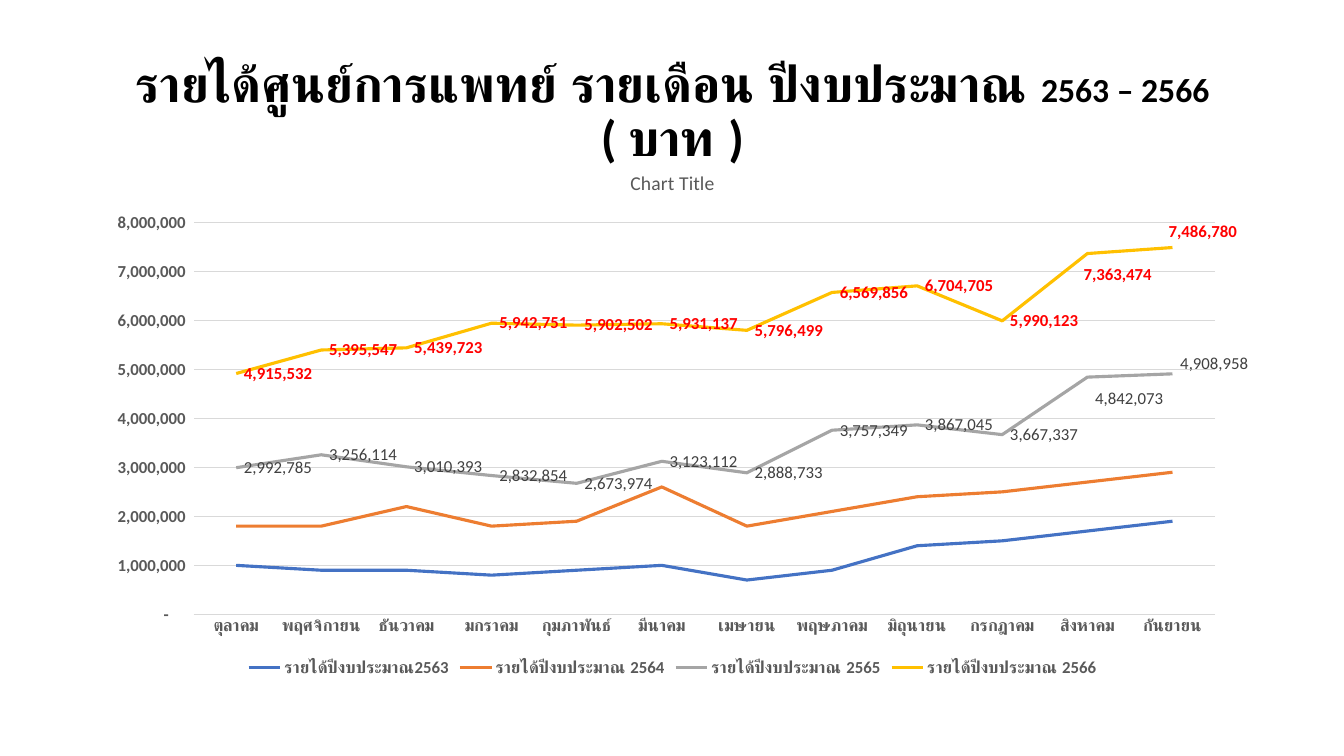
from lxml import etree
from pptx import Presentation
from pptx.chart.data import CategoryChartData
from pptx.dml.color import RGBColor
from pptx.enum.chart import XL_CHART_TYPE, XL_LABEL_POSITION, XL_LEGEND_POSITION, XL_TICK_MARK
from pptx.enum.text import MSO_ANCHOR, MSO_AUTO_SIZE, PP_ALIGN
from pptx.oxml.ns import qn
from pptx.util import Inches, Pt

BLACK = RGBColor(0x00, 0x00, 0x00)
GREY = RGBColor(0x59, 0x59, 0x59)
DARK = RGBColor(0x40, 0x40, 0x40)
RED = RGBColor(0xFF, 0x00, 0x00)
GRID = RGBColor(0xD9, 0xD9, 0xD9)
LINE_COLORS = [RGBColor(0x44, 0x72, 0xC4), RGBColor(0xED, 0x7D, 0x31),
               RGBColor(0xA5, 0xA5, 0xA5), RGBColor(0xFF, 0xC0, 0x00)]
FONT = "Calibri"
NUM_FMT = '_(* #,##0_);_(* \\(#,##0\\);_(* "-"??_);_('

MONTHS = ["ตุลาคม", "พฤศจิกายน", "ธันวาคม", "มกราคม", "กุมภาพันธ์", "มีนาคม",
          "เมษายน", "พฤษภาคม", "มิถุนายน", "กรกฎาคม", "สิงหาคม", "กันยายน"]
INCOME = {
    "รายได้ปีงบประมาณ2563": [
        1000000, 900000, 900000, 800000, 900000, 1000000,
        700000, 900000, 1400000, 1500000, 1700000, 1900000],
    "รายได้ปีงบประมาณ 2564": [
        1800000, 1800000, 2200000, 1800000, 1900000, 2600000,
        1800000, 2100000, 2400000, 2500000, 2700000, 2900000],
    "รายได้ปีงบประมาณ 2565": [
        2992785, 3256114, 3010393, 2832854, 2673974, 3123112,
        2888733, 3757349, 3867045, 3667337, 4842073, 4908958],
    "รายได้ปีงบประมาณ 2566": [
        4915532, 5395547, 5439723, 5942751, 5902502, 5931137,
        5796499, 6569856, 6704705, 5990123, 7363474, 7486780],
}
# Labelled series: colour, bold, shifted labels {point: (dx, dy)} as chart fractions
LABELS = {
    2: (DARK, False, {10: (0, 0.04), 11: (0, -0.02)}),
    3: (RED, True, {10: (-0.01, 0.04), 11: (-0.01, -0.03)}),
}


def style(font, size, color, bold=False):
    font.name, font.size, font.bold = FONT, Pt(size), bold
    font.color.rgb = color


def manual_layout(**values):
    layout = etree.Element(qn("c:layout"))
    manual = etree.SubElement(layout, qn("c:manualLayout"))
    for tag, val in values.items():
        etree.SubElement(manual, qn("c:" + tag)).set("val", str(val))
    return layout


prs = Presentation()
prs.slide_width, prs.slide_height = Inches(13.33), Inches(7.5)
s = prs.slides.add_slide(prs.slide_layouts[5])

# Title
title = s.shapes.title
title.left, title.top = Inches(0.92), Inches(0.4)
title.width, title.height = Inches(11.5), Inches(1.45)
tf = title.text_frame
tf.auto_size = MSO_AUTO_SIZE.NONE
tf.vertical_anchor = MSO_ANCHOR.MIDDLE
p = tf.paragraphs[0]
p.alignment, p.line_spacing = PP_ALIGN.CENTER, 0.9
for text, size in [("รายได้ศูนย์การแพทย์ รายเดือน ปีงบประมาณ ", 36),
                   ("2563 – 2566 ", 24), ("( บาท )", 36)]:
    r = p.add_run()
    r.text = text
    style(r.font, size, BLACK, True)

# Line chart
data = CategoryChartData(number_format=NUM_FMT)
data.categories = MONTHS
for name, values in INCOME.items():
    data.add_series(name, values)
chart = s.shapes.add_chart(XL_CHART_TYPE.LINE, Inches(0.92), Inches(1.49),
                           Inches(11.5), Inches(5.27), data).chart
style(chart.font, 10, BLACK)

# Chart title and legend
chart.has_title = True
p = chart.chart_title.text_frame.paragraphs[0]
p.text = "Chart Title"
style(p.font, 14, GREY)
chart.chart_title.include_in_layout = False
chart.has_legend = True
chart.legend.position = XL_LEGEND_POSITION.BOTTOM
chart.legend.include_in_layout = False
style(chart.legend.font, 12, GREY, True)

# Axes
cat_ax, val_ax = chart.category_axis, chart.value_axis
for ax in (cat_ax, val_ax):
    ax.major_tick_mark = ax.minor_tick_mark = XL_TICK_MARK.NONE
    style(ax.tick_labels.font, 12, GREY, True)
val_ax.minimum_scale, val_ax.maximum_scale, val_ax.major_unit = 0, 8000000, 1000000
val_ax.tick_labels.number_format = NUM_FMT
val_ax.tick_labels.number_format_is_linked = False
val_ax.format.line.fill.background()
for line in (cat_ax.format.line, val_ax.major_gridlines.format.line):
    line.color.rgb, line.width = GRID, Pt(0.75)

# Plot area
plot = chart.plots[0]
plot.vary_by_categories = False
area = val_ax._element.getparent()
for old in area.findall(qn("c:layout")):
    area.remove(old)
area.insert(0, manual_layout(layoutTarget="inner", xMode="edge", yMode="edge",
                             x=0.087, y=0.136, w=0.881, h=0.738))

# Series lines and value labels
for i, (ser, color) in enumerate(zip(plot.series, LINE_COLORS)):
    ser.smooth = False
    ser.format.line.color.rgb, ser.format.line.width = color, Pt(2.25)
    if i not in LABELS:
        continue
    label_color, bold, shifts = LABELS[i]
    labels = ser.data_labels
    labels.show_value = True
    labels.position = XL_LABEL_POSITION.RIGHT
    labels.number_format, labels.number_format_is_linked = NUM_FMT, False
    style(labels.font, 12, label_color, bold)
    for point in shifts:
        label = ser.points[point].data_label
        label.position = XL_LABEL_POSITION.RIGHT
        style(label.font, 12, label_color, bold)
    for lbl, (dx, dy) in zip(ser._element.iter(qn("c:dLbl")), shifts.values()):
        lbl.insert(1, manual_layout(x=dx, y=dy))

prs.save("out.pptx")
